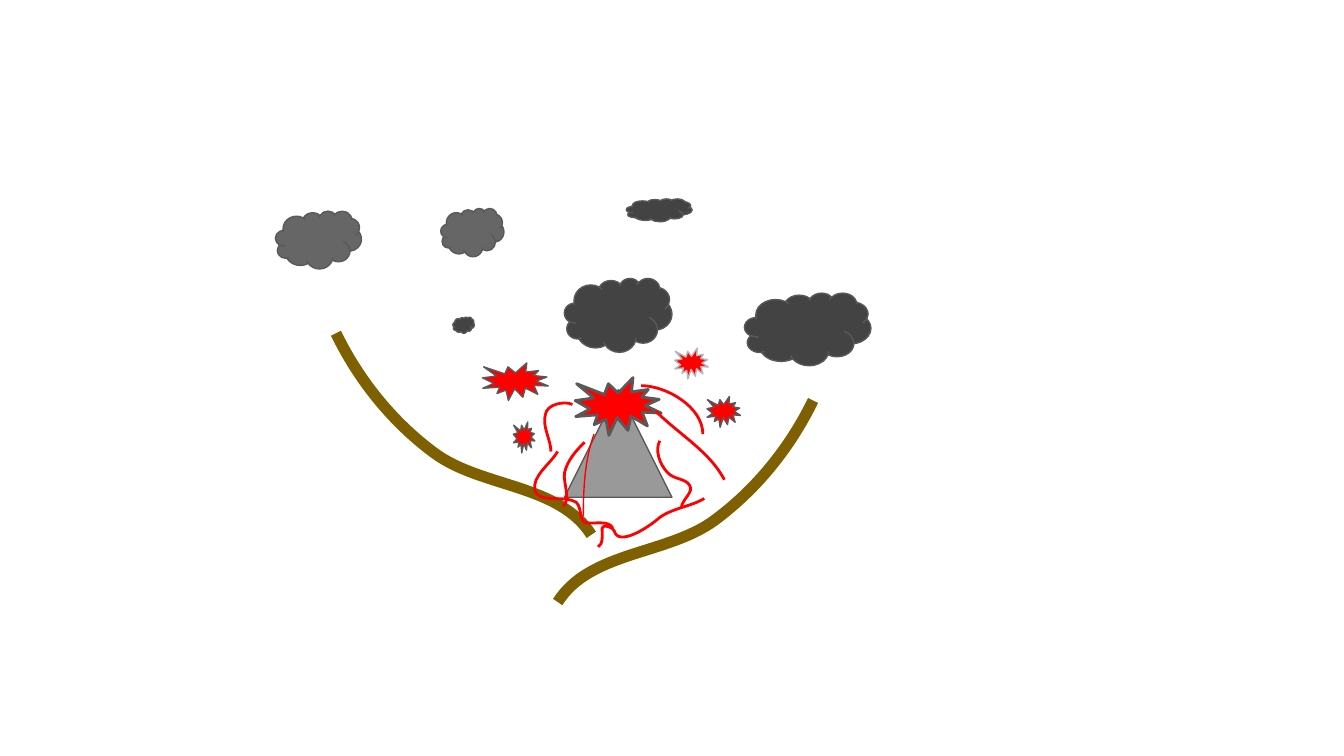
from dataclasses import dataclass

from lxml.etree import SubElement
from pptx import Presentation
from pptx.dml.color import RGBColor
from pptx.enum.shapes import MSO_SHAPE as Preset
from pptx.oxml.ns import qn
from pptx.util import Pt

PX = 9144  # EMU in one px, 100 px to the inch


@dataclass(frozen=True)
class Theme:
    ridge: str = "7F6000"
    rock: str = "999999"
    smoke: str = "434343"
    pale_smoke: str = "666666"
    lava: str = "FF0000"
    outline: str = "595959"
    pale_outline: str = "B7B7B7"
    thin: float = 0.75
    medium: float = 1.5
    thick: float = 6


class Painter:
    def __init__(self, page, theme):
        self.page = page
        self.theme = theme

    def set_line(self, shape, color, width):
        shape.shadow.inherit = False
        shape.line.color.rgb = RGBColor.from_string(color)
        shape.line.width = Pt(width)

    def preset(self, kind, box, fill, outline=None, width=None):
        shape = self.page.shapes.add_shape(kind, *(value * PX for value in box))
        shape.fill.solid()
        shape.fill.fore_color.rgb = RGBColor.from_string(fill)
        self.set_line(shape, outline or self.theme.outline, width or self.theme.thin)

    def cloud(self, box, fill):
        self.preset(Preset.CLOUD, box, fill)

    def burst(self, box, outline=None, width=None):
        self.preset(Preset.EXPLOSION1, box, self.theme.lava, outline, width)

    def curve(self, points, color, width):
        """Draw a Bezier chain: a start, then two controls and an end per arc."""
        builder = self.page.shapes.build_freeform(*points[0], scale=PX)
        builder.add_line_segments(points[1:], close=False)
        shape = builder.convert_to_shape()
        shape.fill.background()
        self.set_line(shape, color, width)
        # Turn each three straight segments into one cubic arc
        outline = next(shape.element.iter(qn("a:path")))
        segments = outline.findall(qn("a:lnTo"))
        for first in range(0, len(segments), 3):
            arc = SubElement(outline, qn("a:cubicBezTo"))
            for segment in segments[first:first + 3]:
                arc.append(segment[0])
                outline.remove(segment)


def main():
    deck = Presentation()
    deck.slide_width = 1000 * PX
    deck.slide_height = deck.slide_width * 9 // 16
    theme = Theme()
    painter = Painter(deck.slides.add_slide(deck.slide_layouts[6]), theme)

    # Valley ridges: the left one mirrors the right one, higher up
    right_ridge = [(415, 448), (439, 410), (497, 413), (532, 387),
                   (563, 364), (588, 333), (605, 298)]
    left_ridge = [(855 - x, y - 50) for x, y in right_ridge]
    for ridge in (right_ridge, left_ridge):
        painter.curve(ridge, theme.ridge, theme.thick)

    # Volcano cone
    painter.preset(Preset.ISOSCELES_TRIANGLE, (420, 290, 80, 80), theme.rock)

    # Smoke clouds
    for box in [(420, 207, 80, 55), (554, 218, 94, 54),
                (337, 236, 16, 12), (466, 148, 49, 17)]:
        painter.cloud(box, theme.smoke)
    for box in [(205, 157, 64, 43), (328, 155, 47, 36)]:
        painter.cloud(box, theme.pale_smoke)

    # Eruption and flying sparks
    painter.burst((428, 281, 64, 43), width=theme.medium)
    for box in [(526, 295, 25, 23), (382, 314, 16, 23), (359, 270, 49, 28)]:
        painter.burst(box)
    painter.burst((502, 259, 25, 23), outline=theme.pale_outline)

    # Lava streams
    streams = [
        [(435, 329), (428, 336), (422, 343), (420, 352),
         (419, 360), (425, 371), (419, 377)],
        [(491, 328), (487, 335), (491, 346), (497, 352), (502, 357),
         (510, 356), (513, 361), (517, 366), (507, 372), (507, 378)],
        [(524, 371), (514, 377), (501, 378), (491, 385),
         (482, 393), (460, 407), (457, 395), (456, 392),
         (448, 390), (448, 393), (448, 398), (449, 405), (445, 407)],
        [(415, 336), (409, 346), (396, 354), (398, 365),
         (401, 375), (420, 368), (429, 374), (433, 378),
         (431, 388), (436, 389), (443, 390), (453, 387), (456, 393)],
        [(426, 301), (420, 298), (407, 301), (406, 308),
         (403, 317), (410, 327), (410, 336)],
        [(477, 287), (496, 287), (523, 303), (523, 323)],
        [(488, 306), (505, 323), (528, 336), (539, 357)],
    ]
    for stream in streams:
        painter.curve(stream, theme.lava, theme.medium)
    painter.curve([(442, 323), (435, 342), (434, 364), (434, 384)],
                  theme.lava, theme.thin)

    deck.save("out.pptx")


if __name__ == "__main__":
    main()
